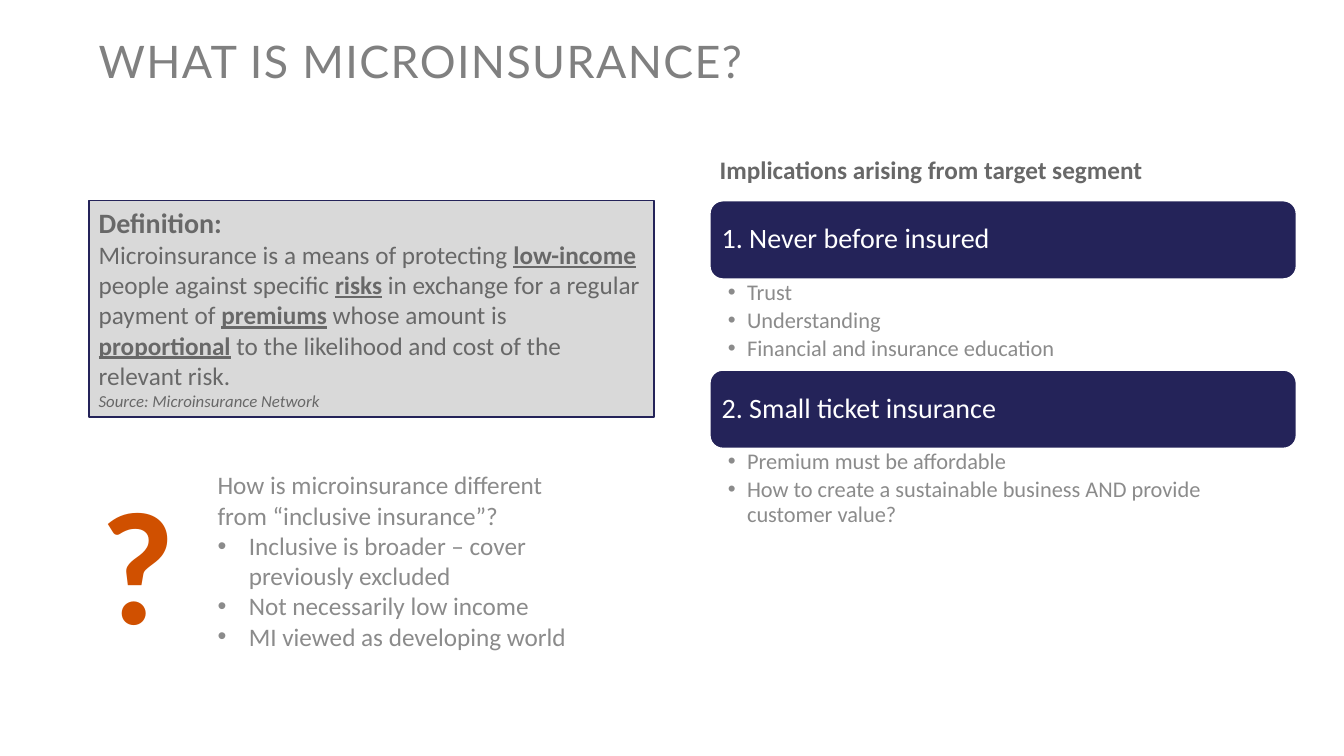
from lxml.etree import SubElement
from pptx import Presentation
from pptx.dml.color import RGBColor
from pptx.enum.shapes import MSO_SHAPE
from pptx.enum.text import MSO_ANCHOR, PP_ALIGN
from pptx.oxml.ns import qn
from pptx.util import Inches, Pt

WIDE, HIGH = Inches(13.33), Inches(7.5)
NAVY = RGBColor(0x24, 0x23, 0x59)
WHITE = RGBColor(0xFF, 0xFF, 0xFF)
PALE = RGBColor(0xD9, 0xD9, 0xD9)
DARK = RGBColor(0x68, 0x68, 0x68)
MID = RGBColor(0x80, 0x80, 0x80)
SOFT = RGBColor(0x8B, 0x8B, 0x8B)
RUST = RGBColor(0xD0, 0x50, 0x00)

# Shares of the slide, in percent
LEFT, RIGHT = 6.6, 52.81
TOP, SPAN, BAND = 26.53, 43.66, 10.4

TOPICS = [
    ("1. Never before insured", 12,
     ["Trust", "Understanding", "Financial and insurance education"]),
    ("2. Small ticket insurance", 11.2,
     ["Premium must be affordable",
      "How to create a sustainable business AND provide customer value?"]),
]
POINTS = ["Inclusive is broader – cover previously excluded",
          "Not necessarily low income", "MI viewed as developing world"]


def place(x, y, w, h):
    """Turn percent shares into slide lengths."""
    return [int(side * part / 100)
            for side, part in zip((WIDE, HIGH, WIDE, HIGH), (x, y, w, h))]


def frame(shape, anchor=MSO_ANCHOR.TOP, inset=(0.1, 0.05, 0.1, 0.05)):
    """Set up the text area of a shape."""
    area = shape.text_frame
    area.word_wrap = True
    area.vertical_anchor = anchor
    (area.margin_left, area.margin_top,
     area.margin_right, area.margin_bottom) = map(Inches, inset)
    return area


def box(slide, x, y, w, h, **setup):
    return frame(slide.shapes.add_textbox(*place(x, y, w, h)), **setup)


def panel(slide, kind, x, y, w, h, fill, line, **setup):
    shape = slide.shapes.add_shape(kind, *place(x, y, w, h))
    shape.shadow.inherit = False
    shape.fill.solid()
    shape.fill.fore_color.rgb = fill
    shape.line.color.rgb = line
    shape.line.width = Pt(1.25)
    return frame(shape, **setup)


def write(area, text, size, color, font="Calibri", bold=False, italic=False,
          align=PP_ALIGN.LEFT, lines=1.0, after=0, indent=0, track=0):
    """Add a paragraph; words between asterisks are bold and underlined."""
    para = area.paragraphs[0]
    if para.runs:
        para = area.add_paragraph()
    para.alignment = align
    para.line_spacing = lines
    para.space_after = Pt(after)
    if indent:
        props = para._p.get_or_add_pPr()
        props.set("marL", str(Inches(indent)))
        props.set("indent", str(-Inches(indent)))
        SubElement(props, qn("a:buFont")).set("typeface", "Arial")
        SubElement(props, qn("a:buChar")).set("char", "•")
    for count, part in enumerate(text.split("*")):
        key = count % 2 == 1
        run = para.add_run()
        run.text = part
        run.font.name = font
        run.font.size = Pt(size)
        run.font.color.rgb = color
        run.font.bold = bold or key
        run.font.italic = italic
        run.font.underline = key
        if track:
            run.font._element.set("spc", str(track * 100))


def define(slide):
    area = panel(slide, MSO_SHAPE.RECTANGLE, LEFT, TOP, 42.08, 28.67,
                 PALE, NAVY)
    write(area, "Definition:", 20, DARK, bold=True)
    write(area, "Microinsurance is a means of protecting *low-income* people "
          "against specific *risks* in exchange for a regular payment of "
          "*premiums* whose amount is *proportional* to the likelihood and "
          "cost of the relevant risk.", 18, DARK)
    write(area, "Source: Microinsurance Network", 12, DARK, italic=True)


def topic(slide, y, head, depth, items):
    """Draw a heading band with its list; return where the list ends."""
    area = panel(slide, MSO_SHAPE.ROUNDED_RECTANGLE, RIGHT, y, SPAN, BAND,
                 NAVY, WHITE, anchor=MSO_ANCHOR.MIDDLE,
                 inset=(0.08, 0.08, 0.08, 0.08))
    write(area, head, 20, WHITE, lines=0.9)
    area = box(slide, RIGHT, y + BAND, SPAN, depth,
               inset=(0.18, 0.02, 0.12, 0.02))
    for item in items:
        write(area, item, 16, SOFT, lines=0.9, after=2.8, indent=0.19)
    return y + BAND + depth


def ask(slide):
    area = box(slide, 5.55, 60.67, 9.45, 27.2)
    write(area, "?", 115, RUST, bold=True, align=PP_ALIGN.CENTER)
    area = box(slide, 15.45, 61.47, 28.73, 25.6)
    write(area, "How is microinsurance different from “inclusive insurance”?",
          18, SOFT)
    for point in POINTS:
        write(area, point, 18, SOFT, indent=0.31)


def main():
    deck = Presentation()
    deck.slide_width, deck.slide_height = WIDE, HIGH
    slide = deck.slides.add_slide(deck.slide_layouts[6])

    # Title
    area = box(slide, LEFT, 4.93, 79.74, 7.6, anchor=MSO_ANCHOR.MIDDLE)
    write(area, "WHAT IS MICROINSURANCE?", 32, MID, font="Lato",
          lines=0.8, track=1)

    # Left: definition and question
    define(slide)
    ask(slide)

    # Right: stacked topics
    area = box(slide, RIGHT, 19.73, 33.08, 5.33)
    write(area, "Implications arising from target segment", 18, DARK,
          bold=True)
    y = TOP
    for head, depth, items in TOPICS:
        y = topic(slide, y, head, depth, items)

    deck.save("out.pptx")


if __name__ == "__main__":
    main()
